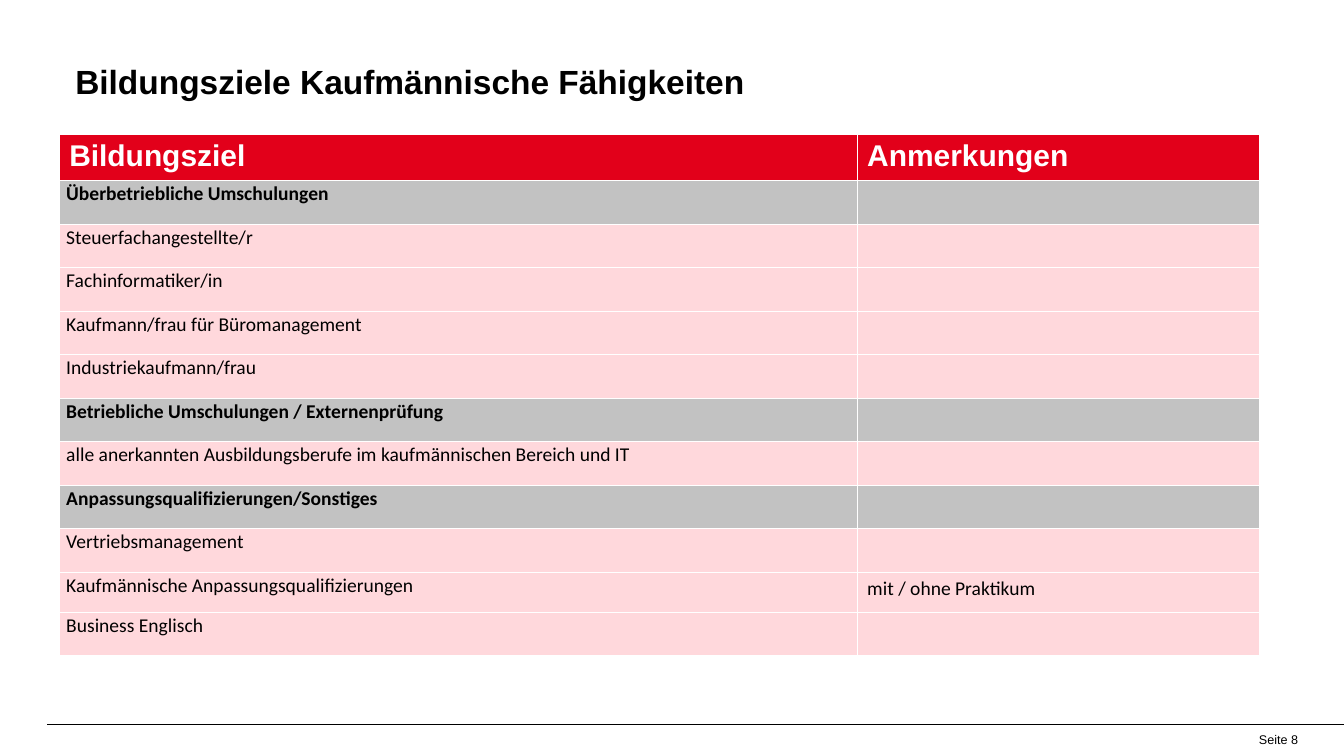
from pptx import Presentation
from pptx.dml.color import RGBColor
from pptx.enum.shapes import MSO_CONNECTOR
from pptx.enum.text import MSO_ANCHOR, PP_ALIGN
from pptx.oxml.ns import qn
from pptx.util import Inches, Pt

WIDTH, HEIGHT = 13.39, 7.53
FOOTER_TOP = 7.22
TABLE_LEFT, TABLE_TOP, TABLE_BOTTOM = 0.59, 1.34, 6.51
COLUMN_WIDTHS = (7.95, 4.01)
RED, GREY, PINK = "E2001A", "C2C2C2", "FFD8DC"
BLACK, WHITE = "000000", "FFFFFF"

HEADINGS = ("Bildungsziel", "Anmerkungen")
GROUPS = {
    "Überbetriebliche Umschulungen": [
        ("Steuerfachangestellte/r", ""),
        ("Fachinformatiker/in", ""),
        ("Kaufmann/frau für Büromanagement", ""),
        ("Industriekaufmann/frau", ""),
    ],
    "Betriebliche Umschulungen / Externenprüfung": [
        ("alle anerkannten Ausbildungsberufe im kaufmännischen Bereich und IT", ""),
    ],
    "Anpassungsqualifizierungen/Sonstiges": [
        ("Vertriebsmanagement", ""),
        ("Kaufmännische Anpassungsqualifizierungen", "mit / ohne Praktikum"),
        ("Business Englisch", ""),
    ],
}


def color(hex_value):
    return RGBColor.from_string(hex_value)


def style(paragraph, font_name, size, hex_value=BLACK, bold=False):
    font = paragraph.font
    font.name, font.size, font.bold = font_name, Pt(size), bold
    font.color.rgb = color(hex_value)


prs = Presentation()
prs.slide_width, prs.slide_height = Inches(WIDTH), Inches(HEIGHT)
slide = prs.slides.add_slide(prs.slide_layouts[5])

# Title
title = slide.shapes.title
title.left, title.top = Inches(0.65), Inches(0.16)
title.width, title.height = Inches(12.27), Inches(0.94)
heading = title.text_frame
heading.text = "Bildungsziele Kaufmännische Fähigkeiten"
heading.vertical_anchor = MSO_ANCHOR.BOTTOM
heading.margin_bottom = Inches(0.09)
heading.paragraphs[0].alignment = PP_ALIGN.LEFT
style(heading.paragraphs[0], "Arial", 24, bold=True)

# Footer rule and page number
rule = slide.shapes.add_connector(
    MSO_CONNECTOR.STRAIGHT,
    Inches(0.47), Inches(FOOTER_TOP), Inches(WIDTH), Inches(FOOTER_TOP))
rule.line.color.rgb = color(BLACK)
rule.line.width = Pt(0.5)
properties = rule._element.spPr
properties.append(properties.makeelement(qn("a:effectLst"), {}))

page = slide.shapes.add_textbox(
    Inches(12.09), Inches(FOOTER_TOP), Inches(0.94), Inches(0.3)).text_frame
page.word_wrap = True
page.vertical_anchor = MSO_ANCHOR.MIDDLE
page.text = "Seite 8"
page.paragraphs[0].alignment = PP_ALIGN.RIGHT
style(page.paragraphs[0], "Arial", 9)

# Table of training goals: (texts, fill, is group row)
rows = [(HEADINGS, RED, False)]
for group, goals in GROUPS.items():
    rows.append(((group, ""), GREY, True))
    rows += [(goal, PINK, False) for goal in goals]

table = slide.shapes.add_table(
    len(rows), len(COLUMN_WIDTHS), Inches(TABLE_LEFT), Inches(TABLE_TOP),
    Inches(sum(COLUMN_WIDTHS)), Inches(TABLE_BOTTOM - TABLE_TOP)).table
table.horz_banding = False
for column, width in zip(table.columns, COLUMN_WIDTHS):
    column.width = Inches(width)

REMARK_HEIGHT = 0.4
row_height = (TABLE_BOTTOM - TABLE_TOP - REMARK_HEIGHT) / (len(rows) - 1)

for r, (texts, fill, is_group) in enumerate(rows):
    has_remark = r > 0 and texts[1]
    table.rows[r].height = Inches(REMARK_HEIGHT if has_remark else row_height)
    for c, text in enumerate(texts):
        cell = table.cell(r, c)
        cell.fill.solid()
        cell.fill.fore_color.rgb = color(fill)
        cell.text = text
        paragraph = cell.text_frame.paragraphs[0]
        if r == 0:
            style(paragraph, "Arial", 21.5, WHITE, bold=True)
            continue
        style(paragraph, "Calibri", 14, bold=is_group)
        if c == 0:
            cell.margin_left = cell.margin_right = Inches(0.07)
            cell.margin_top = cell.margin_bottom = 0
            paragraph.line_spacing = 1.07

prs.save("out.pptx")
